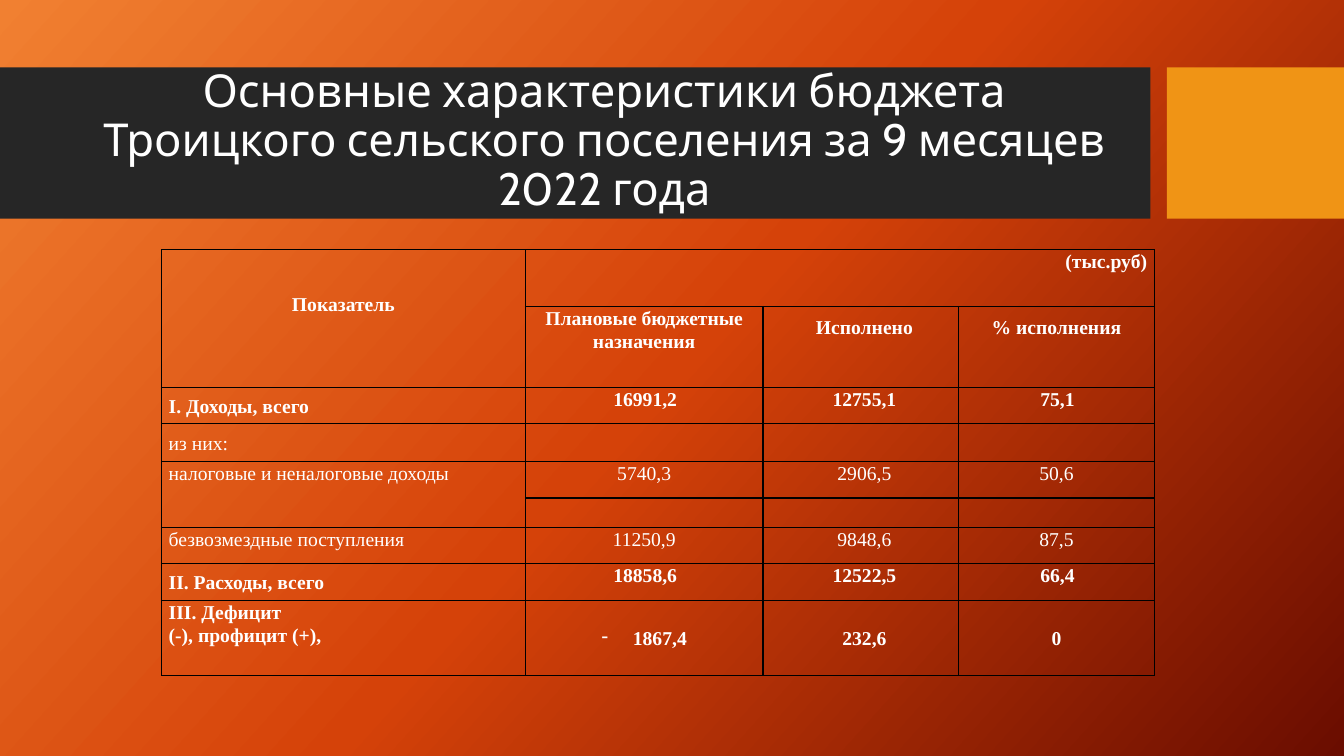
from copy import deepcopy

from lxml.etree import SubElement
from pptx import Presentation
from pptx.dml.color import RGBColor
from pptx.enum.shapes import MSO_SHAPE
from pptx.enum.text import MSO_ANCHOR, PP_ALIGN
from pptx.oxml.ns import qn
from pptx.util import Cm, Pt

WHITE = RGBColor(0xFF, 0xFF, 0xFF)
BLACK = RGBColor(0x00, 0x00, 0x00)
BAND = RGBColor(0x26, 0x26, 0x26)
ACCENT = RGBColor(0xF0, 0x94, 0x15)
BACKGROUND_STOPS = [
    (0, RGBColor(0xF1, 0x80, 0x31)),
    (0.5, RGBColor(0xD5, 0x42, 0x09)),
    (1, RGBColor(0x6A, 0x0D, 0x00)),
]
TITLE_FONT = "Cabin"
TABLE_FONT = "Times New Roman"
PLAIN_TABLE_STYLE = "{2D5ABB26-0587-4C30-8999-92F81FD0307C}"

TITLE = ("Основные характеристики бюджета Троицкого сельского поселения "
         "за 9 месяцев 2022 года")
HEADINGS = [("Плановые бюджетные назначения", 1.07, 0),
            ("Исполнено", 1.5, 0.18),
            ("% исполнения", 1.5, 0)]
BUDGET_ROWS = [
    (2, "I. Доходы, всего", ["16991,2", "12755,1", "75,1"], True, MSO_ANCHOR.MIDDLE),
    (3, "из них:", [], False, MSO_ANCHOR.MIDDLE),
    (4, "налоговые и неналоговые доходы", ["5740,3", "2906,5", "50,6"], False, MSO_ANCHOR.TOP),
    (6, "безвозмездные поступления", ["11250,9", "9848,6", "87,5"], False, MSO_ANCHOR.TOP),
    (7, "II. Расходы, всего", ["18858,6", "12522,5", "66,4"], True, MSO_ANCHOR.MIDDLE),
]
BALANCE_ROW = 8
BALANCE_LABEL = "III. Дефицит\n(-), профицит (+),"
SPLIT_ROW = 4
COLUMN_WIDTHS = [9.17, 5.99, 4.93, 4.93]
ROW_HEIGHTS = [1.43, 2.05, 0.91, 0.96, 0.91, 0.75, 0.91, 0.93, 1.88]


def add_text(frame, text, font=TABLE_FONT, size=14, bold=False,
             align=PP_ALIGN.LEFT, spacing=1.07, margin=0, indent=0, bullet=None):
    for index, line in enumerate(text.split("\n")):
        paragraph = frame.paragraphs[0] if index == 0 else frame.add_paragraph()
        paragraph.alignment = align
        paragraph.line_spacing = spacing
        properties = paragraph._p.get_or_add_pPr()
        properties.set("marL", str(Cm(margin)))
        properties.set("indent", str(Cm(indent)))
        if bullet:
            SubElement(properties, qn("a:buChar"), char=bullet)
        run = paragraph.add_run()
        run.text = line
        run.font.name = font
        run.font.size = Pt(size)
        run.font.bold = bold
        run.font.color.rgb = WHITE


def fill_cell(cell, text, anchor=MSO_ANCHOR.TOP, **text_format):
    cell.vertical_anchor = anchor
    add_text(cell.text_frame, text, **text_format)


def add_background(slide):
    fill = slide.background.fill
    fill.gradient()
    fill.gradient_angle = 318
    stop_list = slide._element.find(".//" + qn("a:gsLst"))
    stop_list.append(deepcopy(stop_list[0]))
    for stop, (position, color) in zip(fill.gradient_stops, BACKGROUND_STOPS):
        stop.position = position
        stop.color.rgb = color


def add_block(slide, left, width, color):
    shape = slide.shapes.add_shape(MSO_SHAPE.RECTANGLE, Cm(left), Cm(1.7), Cm(width), Cm(3.81))
    shape.shadow.inherit = False
    shape.fill.solid()
    shape.fill.fore_color.rgb = color
    shape.line.fill.background()


def add_title(slide):
    frame = slide.shapes.add_textbox(Cm(1.88), Cm(2.08), Cm(26.7), Cm(3)).text_frame
    frame.word_wrap = True
    frame.vertical_anchor = MSO_ANCHOR.MIDDLE
    add_text(frame, TITLE, font=TITLE_FONT, size=32.4, align=PP_ALIGN.CENTER, spacing=0.9)


def format_cell(cell, borders):
    cell.margin_left = cell.margin_right = Cm(0.18)
    cell.margin_top = cell.margin_bottom = 0
    properties = cell._tc.get_or_add_tcPr()
    for side in borders:
        line = SubElement(properties, qn("a:ln" + side), w=str(Pt(1)))
        solid = SubElement(line, qn("a:solidFill"))
        SubElement(solid, qn("a:srgbClr"), val=str(BLACK))
    cell.fill.background()


def add_grid(slide):
    table = slide.shapes.add_table(
        len(ROW_HEIGHTS), len(COLUMN_WIDTHS), Cm(4.07), Cm(6.29),
        Cm(sum(COLUMN_WIDTHS)), Cm(sum(ROW_HEIGHTS))).table
    table.first_row = table.horz_banding = False
    table._tbl.tblPr.find(qn("a:tableStyleId")).text = PLAIN_TABLE_STYLE
    for column, width in zip(table.columns, COLUMN_WIDTHS):
        column.width = Cm(width)
    for row_index, (row, height) in enumerate(zip(table.rows, ROW_HEIGHTS)):
        row.height = Cm(height)
        for column_index, cell in enumerate(row.cells):
            borders = "LRTB"
            if column_index and row_index == SPLIT_ROW:
                borders = "LRT"
            elif column_index and row_index == SPLIT_ROW + 1:
                borders = "LRB"
            format_cell(cell, borders)
    table.cell(0, 0).merge(table.cell(1, 0))
    table.cell(0, 1).merge(table.cell(0, 3))
    table.cell(SPLIT_ROW, 0).merge(table.cell(SPLIT_ROW + 1, 0))
    return table


def fill_headings(table):
    indicator = table.cell(0, 0)
    indicator.margin_top = Cm(0.85)
    fill_cell(indicator, "Показатель", bold=True, align=PP_ALIGN.CENTER,
              spacing=1.5, indent=-0.18)
    fill_cell(table.cell(0, 1), "(тыс.руб)", bold=True, align=PP_ALIGN.RIGHT)
    for column, (heading, spacing, indent) in enumerate(HEADINGS, 1):
        fill_cell(table.cell(1, column), heading, bold=True, align=PP_ALIGN.CENTER,
                  spacing=spacing, indent=indent)


def fill_budget(table):
    for row, label, values, bold, anchor in BUDGET_ROWS:
        fill_cell(table.cell(row, 0), label, anchor=anchor, bold=bold)
        side_indent = 0.05 if bold else -0.18
        for column, value in enumerate(values, 1):
            fill_cell(table.cell(row, column), value, bold=bold, align=PP_ALIGN.CENTER,
                      indent=0.18 if column == 2 else side_indent)


def fill_balance(table):
    fill_cell(table.cell(BALANCE_ROW, 0), BALANCE_LABEL, bold=True)
    values = [("1867,4", {"margin": 0.79, "indent": -0.79, "bullet": "-"}),
              ("232,6", {"indent": 0.18}),
              ("0", {})]
    for column, (value, text_format) in enumerate(values, 1):
        fill_cell(table.cell(BALANCE_ROW, column), value, anchor=MSO_ANCHOR.MIDDLE,
                  bold=True, align=PP_ALIGN.CENTER, **text_format)


def shrink_empty_cells(table):
    for cell in table.iter_cells():
        if not cell.text:
            SubElement(cell.text_frame.paragraphs[0]._p, qn("a:endParaRPr"), sz="1400")


def main():
    presentation = Presentation()
    presentation.slide_width = Cm(33.87)
    presentation.slide_height = Cm(19.05)
    slide = presentation.slides.add_slide(presentation.slide_layouts[6])
    add_background(slide)
    add_block(slide, 0, 28.99, BAND)
    add_block(slide, 29.41, 4.46, ACCENT)
    add_title(slide)
    table = add_grid(slide)
    fill_headings(table)
    fill_budget(table)
    fill_balance(table)
    shrink_empty_cells(table)
    presentation.save("out.pptx")


if __name__ == "__main__":
    main()
